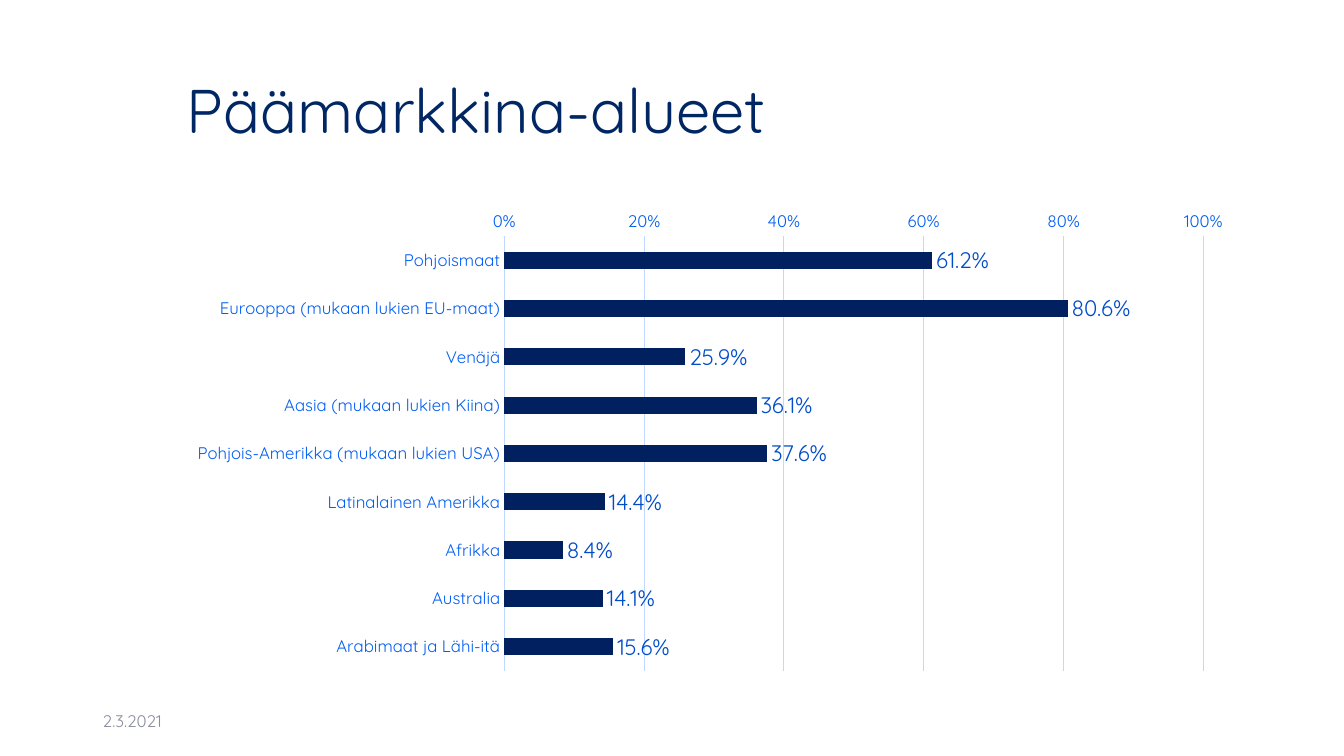
from lxml import etree
from pptx import Presentation
from pptx.chart.data import CategoryChartData
from pptx.dml.color import RGBColor
from pptx.enum.chart import XL_CHART_TYPE, XL_LABEL_POSITION, XL_TICK_MARK
from pptx.enum.text import MSO_ANCHOR, MSO_AUTO_SIZE, PP_ALIGN
from pptx.oxml.ns import qn
from pptx.util import Cm, Pt

BAR = XL_CHART_TYPE.BAR_CLUSTERED
OUTSIDE = XL_LABEL_POSITION.OUTSIDE_END
NO_TICK = XL_TICK_MARK.NONE
MIDDLE = MSO_ANCHOR.MIDDLE
NO_FIT = MSO_AUTO_SIZE.NONE
LEFT = PP_ALIGN.LEFT

MARKETS = {
    "Pohjoismaat": 0.612,
    "Eurooppa (mukaan lukien EU-maat)": 0.806,
    "Venäjä": 0.259,
    "Aasia (mukaan lukien Kiina)": 0.361,
    "Pohjois-Amerikka (mukaan lukien USA)": 0.376,
    "Latinalainen Amerikka": 0.144,
    "Afrikka": 0.084,
    "Australia": 0.141,
    "Arabimaat ja Lähi-itä": 0.156,
}


def rgb(color):
    return RGBColor.from_string(color)


def set_font(font, size, color, name="Quicksand"):
    font.name, font.size, font.bold = name, Pt(size), False
    font.color.rgb = rgb(color)


def write(tf, text, size, color, spacing=1.0):
    tf.word_wrap = True
    tf.auto_size = NO_FIT
    tf.vertical_anchor = MIDDLE
    p = tf.paragraphs[0]
    p.alignment = LEFT
    p.line_spacing = spacing
    r = p.add_run()
    r.text = text
    set_font(r.font, size, color)


class Deck:
    navy, bar, label = "002663", "002060", "004DCA"
    axis, grid, muted = "005DF3", "C1D9FF", "8C8E9F"

    def __init__(self):
        self.prs = Presentation()
        self.prs.slide_width, self.prs.slide_height = Cm(33.87), Cm(19.05)
        self.s = self.prs.slides.add_slide(self.prs.slide_layouts[5])

    def title(self, text, x, y, w, h):
        sp = self.s.shapes.title
        sp.left, sp.top, sp.width, sp.height = Cm(x), Cm(y), Cm(w), Cm(h)
        write(sp.text_frame, text, 44, self.navy, spacing=0.9)

    def text(self, text, x, y, w, h):
        sp = self.s.shapes.add_textbox(Cm(x), Cm(y), Cm(w), Cm(h))
        write(sp.text_frame, text, 12, self.muted)

    def style_axis(self, axis):
        axis.major_tick_mark = axis.minor_tick_mark = NO_TICK
        set_font(axis.tick_labels.font, 12, self.axis)

    def grid_line(self, line):
        line.color.rgb = rgb(self.grid)
        line.width = Pt(0.75)

    def place_plot(self, chart, **fractions):
        area = chart.element.find(".//" + qn("c:plotArea"))
        for old in area.findall(qn("c:layout")):
            area.remove(old)
        layout = etree.Element(qn("c:layout"))
        manual = etree.SubElement(layout, qn("c:manualLayout"))
        settings = {"layoutTarget": "inner", "xMode": "edge", "yMode": "edge", **fractions}
        for tag, value in settings.items():
            etree.SubElement(manual, qn("c:" + tag)).set("val", str(value))
        area.insert(0, layout)

    def bar_chart(self, values, x, y, w, h):
        data = CategoryChartData(number_format="0.0%")
        data.categories = list(values)
        data.add_series("Series 1", list(values.values()))
        chart = self.s.shapes.add_chart(BAR, Cm(x), Cm(y), Cm(w), Cm(h), data).chart
        chart.has_legend = chart.has_title = False
        set_font(chart.font, 10, self.navy)

        cat = chart.category_axis
        self.style_axis(cat)
        cat.reverse_order = True
        cat.has_major_gridlines = False
        self.grid_line(cat.format.line)

        val = chart.value_axis
        self.style_axis(val)
        val.minimum_scale, val.maximum_scale, val.major_unit = 0, 1, 0.2
        val.tick_labels.number_format = "0%"
        val.tick_labels.number_format_is_linked = False
        val.format.line.fill.background()
        val.has_major_gridlines = True
        self.grid_line(val.major_gridlines.format.line)

        plot = chart.plots[0]
        plot.gap_width = 182
        plot.vary_by_categories = False
        fill = plot.series[0].format.fill
        fill.solid()
        fill.fore_color.rgb = rgb(self.bar)
        plot.has_data_labels = True
        labels = plot.data_labels
        labels.show_value = True
        labels.position = OUTSIDE
        labels.number_format = "0.0%"
        labels.number_format_is_linked = False
        set_font(labels.font, 16, self.label)
        self.place_plot(chart, x=0.307, y=0.072, w=0.655, h=0.906)


def main():
    deck = Deck()
    deck.title("Päämarkkina-alueet", 4.45, 1.02, 26.9, 3.68)
    deck.text("2.3.2021", 2.34, 17.65, 7.62, 1.02)
    deck.bar_chart(MARKETS, 4.45, 5.08, 26.9, 12.09)
    deck.prs.save("out.pptx")


if __name__ == "__main__":
    main()
